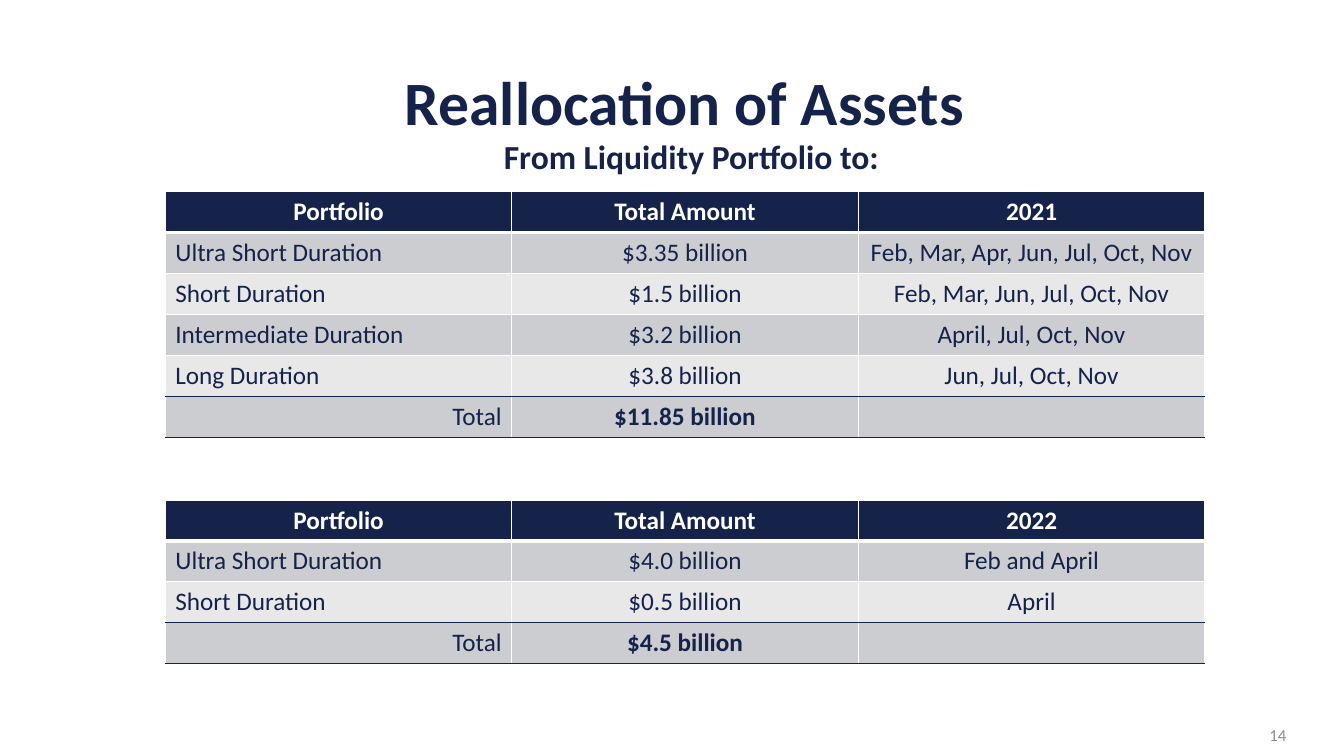
import pptx
import pptx.util
import pptx.dml.color
import pptx.enum.text
from dataclasses import dataclass
from lxml import etree

Pt = pptx.util.Pt
Align = pptx.enum.text.PP_ALIGN
Anchor = pptx.enum.text.MSO_ANCHOR

NAVY, WHITE, GREY = "15234A", "FFFFFF", "8C8D96"
BANDS = ("CCCDD0", "E8E8E9")
FONT = "Calibri"
LEFT, WIDTH = 118.1, 742.5
NS = "http://schemas.openxmlformats.org/drawingml/2006/main"


@dataclass
class Grid:
    top: float
    height: float
    rows: list[tuple[str, str, str]]


GRIDS = [
    Grid(136.8, 29.3, [
        ("Portfolio", "Total Amount", "2021"),
        ("Ultra Short Duration", "$3.35 billion", "Feb, Mar, Apr, Jun, Jul, Oct, Nov"),
        ("Short Duration", "$1.5 billion", "Feb, Mar, Jun, Jul, Oct, Nov"),
        ("Intermediate Duration", "$3.2 billion", "April, Jul, Oct, Nov"),
        ("Long Duration", "$3.8 billion", "Jun, Jul, Oct, Nov"),
        ("Total", "$11.85 billion", ""),
    ]),
    Grid(357.1, 28.8, [
        ("Portfolio", "Total Amount", "2022"),
        ("Ultra Short Duration", "$4.0 billion", "Feb and April"),
        ("Short Duration", "$0.5 billion", "April"),
        ("Total", "$4.5 billion", ""),
    ]),
]


def paint(color, code: str) -> None:
    color.rgb = pptx.dml.color.RGBColor.from_string(code)


def write(frame, text: str, size: float, code: str, bold: bool, align) -> None:
    para = frame.paragraphs[0]
    para.alignment = align
    if text:
        run = para.add_run()
        run.text = text
        run.font.name, run.font.size, run.font.bold = FONT, Pt(size), bold
        paint(run.font.color, code)


def place(shape, left: float, top: float, width: float, height: float) -> None:
    shape.left, shape.top = Pt(left), Pt(top)
    shape.width, shape.height = Pt(width), Pt(height)


def edge(cell, side: str, code: str, width: float) -> None:
    props = cell._tc.get_or_add_tcPr()
    line = etree.SubElement(props, f"{{{NS}}}ln{side}", w=str(int(Pt(width))))
    fill = etree.SubElement(line, f"{{{NS}}}solidFill")
    etree.SubElement(fill, f"{{{NS}}}srgbClr", val=code)


def draw(slide, grid: Grid) -> None:
    count = len(grid.rows)
    last = count - 1
    table = slide.shapes.add_table(
        count, 3, Pt(LEFT), Pt(grid.top), Pt(WIDTH), Pt(grid.height * count)).table
    table.horz_banding = False
    for col in table.columns:
        col.width = Pt(WIDTH / 3)
    for r, row in enumerate(grid.rows):
        table.rows[r].height = Pt(grid.height)
        head, total = r == 0, r == last
        for c, text in enumerate(row):
            cell = table.cell(r, c)
            # Borders come before the fill
            edge(cell, "L", WHITE, 1)
            edge(cell, "R", WHITE, 1)
            edge(cell, "T", NAVY if total else WHITE, 3 if r == 1 else 1)
            edge(cell, "B", NAVY if r >= last - 1 else WHITE, 3 if head else 1)
            cell.fill.solid()
            paint(cell.fill.fore_color, NAVY if head else BANDS[(r - 1) % 2])
            align = Align.CENTER
            if c == 0 and not head:
                align = Align.RIGHT if total else Align.LEFT
            write(cell.text_frame, text, 18, WHITE if head else NAVY,
                  head or (total and c == 1), align)


def main() -> None:
    deck = pptx.Presentation()
    deck.slide_width, deck.slide_height = Pt(960), Pt(540)
    slide = deck.slides.add_slide(deck.slide_layouts[5])

    # Title
    title = slide.shapes.title
    place(title, 105.1, 48.2, 768.2, 54)
    title.text_frame.vertical_anchor = Anchor.MIDDLE
    write(title.text_frame, "Reallocation of Assets", 44, NAVY, True, Align.CENTER)
    title.text_frame.paragraphs[0].line_spacing = 0.9

    # Tables
    for grid in GRIDS:
        draw(slide, grid)

    # Subtitle
    sub = slide.shapes.add_textbox(Pt(352.8), Pt(93.6), Pt(285.8), Pt(36))
    sub.text_frame.word_wrap = False
    write(sub.text_frame, "From Liquidity Portfolio to:", 24, NAVY, True, Align.LEFT)

    # Page number
    page = slide.shapes.add_textbox(Pt(709.9), Pt(510.5), Pt(216), Pt(28.8))
    page.text_frame.word_wrap = True
    page.text_frame.vertical_anchor = Anchor.MIDDLE
    write(page.text_frame, "14", 12, GREY, False, Align.RIGHT)

    deck.save("out.pptx")


if __name__ == "__main__":
    main()
